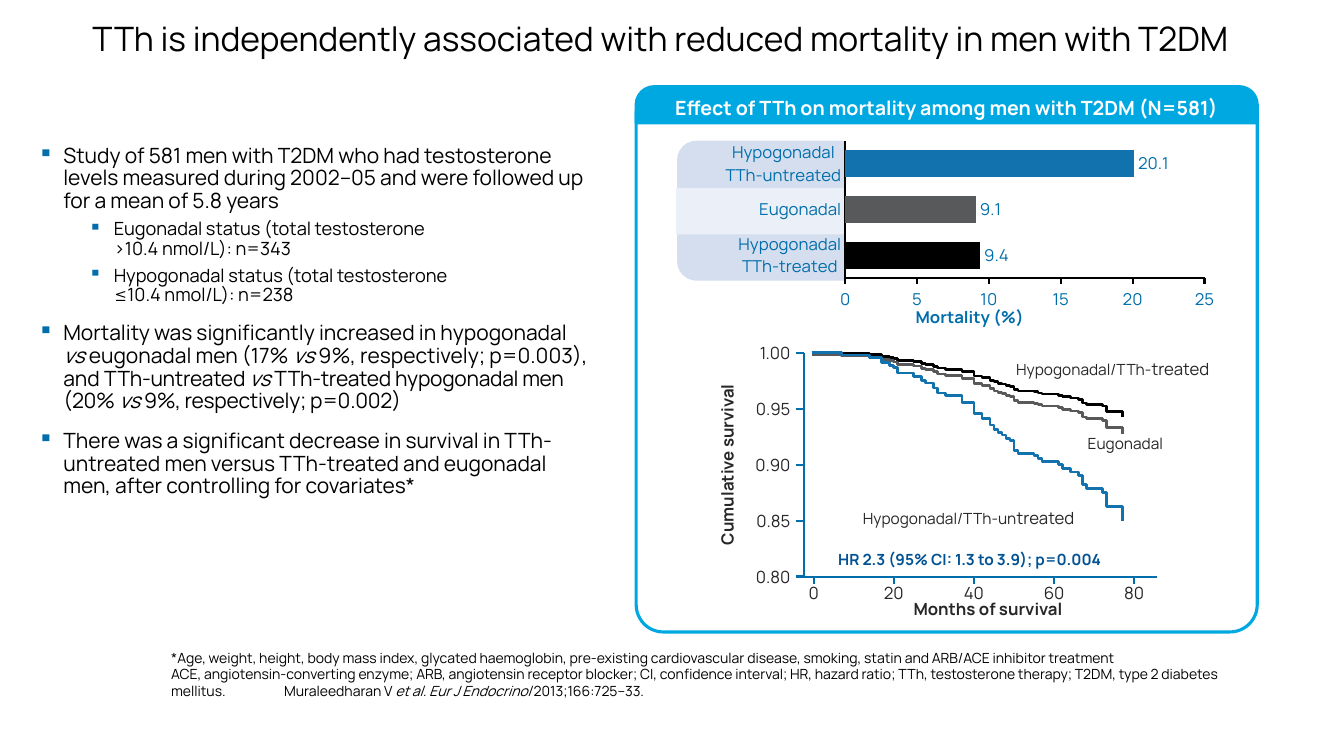
from copy import deepcopy

from lxml import etree
from pptx import Presentation, util as u
from pptx.chart.data import CategoryChartData
from pptx.dml.color import RGBColor
from pptx.enum import chart as ch, shapes, text as t
from pptx.oxml import parse_xml
from pptx.oxml.ns import nsdecls, qn

FONT = "Manrope"
BLUE, BAR_BLUE, CYAN = "006EAB", "1272AE", "00A8E1"
BLACK, GREY, INK = "000000", "58595B", "272727"
LEFT, CENTER, RIGHT = t.PP_ALIGN.LEFT, t.PP_ALIGN.CENTER, t.PP_ALIGN.RIGHT
TOP, MIDDLE, BOTTOM = t.MSO_ANCHOR.TOP, t.MSO_ANCHOR.MIDDLE, t.MSO_ANCHOR.BOTTOM
colour = RGBColor.from_string


def write(box, spans, size=12, hue=INK, bold=False, align=LEFT, anchor=MIDDLE, inset=None,
          wrap=True, before=0, spacing=1.0, bullet_indent=None, tab=None):
    frame = box.text_frame
    frame.word_wrap, frame.vertical_anchor = wrap, anchor
    if inset is not None:
        frame.margin_left = frame.margin_right = frame.margin_top = frame.margin_bottom = u.Inches(inset)
    para = frame.add_paragraph() if frame.text else frame.paragraphs[0]
    para.alignment, para.line_spacing, para.space_before = align, spacing, u.Pt(before)
    settings = para._p.get_or_add_pPr()
    if bullet_indent:
        settings.set("marL", str(u.Inches(bullet_indent)))
        settings.set("indent", str(u.Inches(-0.25)))
        tint = etree.SubElement(settings, qn("a:buClr"))
        etree.SubElement(tint, qn("a:srgbClr"), val=BLUE)
        etree.SubElement(settings, qn("a:buChar"), char="▪")
    if tab:
        stops = etree.SubElement(settings, qn("a:tabLst"))
        etree.SubElement(stops, qn("a:tab"), pos=str(u.Inches(tab)), algn="l")
    for item in [spans] if isinstance(spans, str) else spans:
        words, own = (item, {}) if isinstance(item, str) else item
        for number, line in enumerate(words.split("\n")):
            if number:
                para.add_line_break()
                para._p[-1].append(deepcopy(span._r.rPr))
            span = para.add_run()
            span.text = line
            span.font.name, span.font.bold = FONT, bold
            span.font.size = u.Pt(own.get("size", size))
            span.font.italic = own.get("italic", False)
            span.font.color.rgb = colour(hue)
            if "track" in own:
                span._r.rPr.set("spc", str(own["track"]))


def outline(shape, hue, width):
    shape.line.color.rgb = colour(hue)
    shape.line.width = u.Pt(width)
    if shape.shape_type == shapes.MSO_SHAPE_TYPE.LINE:
        etree.SubElement(shape._element.spPr, qn("a:effectLst"))
    else:
        shape.shadow.inherit = False


deck = Presentation()
deck.slide_width, deck.slide_height = u.Inches(13.33), u.Inches(7.5)
page = deck.slides.add_slide(deck.slide_layouts[6])
add_box, add_shape = page.shapes.add_textbox, page.shapes.add_shape

tight, italic = {"track": -20}, {"italic": True}
tight_italic = {"track": -20, "italic": True}

footnote = add_box(*map(u.Inches, (1.6, 6.38, 11.04, 0.61)))
write(footnote, "*Age, weight, height, body mass index, glycated haemoglobin, pre-existing cardiovascular disease, "
      "smoking, statin and ARB/ACE inhibitor treatment", size=10, hue=BLACK, anchor=BOTTOM)
write(footnote, ["ACE, angiotensin-converting enzyme; ARB, angiotensin receptor blocker; CI, confidence interval; "
                 "HR, hazard ratio; TTh, testosterone therapy; T2DM, type 2 diabetes mellitus.\tMuraleedharan V ",
                 ("et al. Eur J Endocrinol", italic), " 2013;166:725–33."],
      size=10, hue=BLACK, anchor=BOTTOM, tab=1.12)

title = add_box(*map(u.Inches, (0.28, 0.14, 12.54, 0.52)))
write(title, [("TTh", tight), " is independently associated with reduced mortality in men with T2DM"],
      size=24, hue=BLACK, align=CENTER, spacing=0.9)

findings = [
    (15, 0, 0.25, "Study of 581 men with T2DM who had testosterone levels measured during 2002–05 "
                  "and were followed up for a mean of 5.8 years"),
    (13, 5, 0.75, "Eugonadal status (total testosterone\n>10.4 nmol/L): n=343"),
    (13, 5, 0.75, "Hypogonadal status (total testosterone\n≤10.4 nmol/L): n=238"),
    (15, 12, 0.25, ["Mortality was significantly increased in hypogonadal ", ("vs ", italic),
                    "eugonadal men (17% ", ("vs", italic), " 9%, respectively; p=0.003), and ",
                    ("TTh-untreated ", tight), ("vs ", tight_italic),
                    ("TTh-treated hypogonadal men (20% ", tight), ("vs", tight_italic),
                    (" 9%, respectively; p=0.002)", tight)]),
    (15, 12, 0.25, "There was a significant decrease in survival in TTh-untreated men versus TTh-treated "
                   "and eugonadal men, after controlling for covariates*"),
]
body = add_box(*map(u.Inches, (0.28, 1.39, 5.69, 4.51)))
for size, before, indent, finding in findings:
    write(body, finding, size=size, hue=BLACK, anchor=TOP, before=before, spacing=0.9, bullet_indent=indent)

for place, angle, corner, hue in [((6.85, 1.26, 1.39, 1.66), 270, 0.14, "D5DEEF"),
                                  ((7.31, 1.26, 0.46, 1.67), 90, 0, "EBEFF7")]:
    band = add_shape(shapes.MSO_SHAPE.ROUND_2_SAME_RECTANGLE, *map(u.Inches, place))
    band.rotation = angle
    band.adjustments[0], band.adjustments[1] = corner, 0
    band.fill.solid()
    band.fill.fore_color.rgb = colour(hue)
    band.line.fill.background()
    band.shadow.inherit = False

bars = [("Hypogonadal\nTTh-treated", 9.4, BLACK), ("Eugonadal", 9.1, GREY),
        ("Hypogonadal\nTTh-untreated", 20.1, BAR_BLUE)]
data = CategoryChartData()
data.categories = [name for name, value, hue in bars]
data.add_series("Series 1", [value for name, value, hue in bars])
chart = page.shapes.add_chart(ch.XL_CHART_TYPE.BAR_CLUSTERED,
                              *map(u.Inches, (6.6, 1.34, 5.57, 1.97)), data).chart
chart.has_legend = chart.has_title = False
chart.font.name, chart.font.size = FONT, u.Pt(12)
chart.font.color.rgb = colour(BLUE)
groups, mortality = chart.category_axis, chart.value_axis
for axis, tick in [(groups, ch.XL_TICK_MARK.NONE), (mortality, ch.XL_TICK_MARK.OUTSIDE)]:
    axis.major_tick_mark, axis.minor_tick_mark = tick, ch.XL_TICK_MARK.NONE
    axis.has_major_gridlines = False
    axis.format.line.color.rgb = colour(BLACK)
    axis.format.line.width = u.Pt(1.5)
mortality.minimum_scale, mortality.maximum_scale, mortality.major_unit = 0, 25, 5
mortality.tick_labels.number_format, mortality.tick_labels.number_format_is_linked = "0", False
write(mortality.axis_title, "Mortality (%)", hue=BLUE, bold=True)
plot = chart.plots[0]
plot.gap_width, plot.vary_by_categories, plot.has_data_labels = 68, False, True
labels = plot.data_labels
labels.show_value, labels.position = True, ch.XL_LABEL_POSITION.OUTSIDE_END
labels.number_format, labels.number_format_is_linked = "#,##0.0", False
for number, (name, value, hue) in enumerate(bars):
    fill = plot.series[0].points[number].format.fill
    fill.solid()
    fill.fore_color.rgb = colour(hue)
area = chart._chartSpace.chart.plotArea
heading = mortality.axis_title._element
for owner, slot, target, sizes in [
        (area, 0, '<c:layoutTarget val="inner"/>', {"x": 0.32, "y": 0.03, "w": 0.64, "h": 0.71}),
        (heading, 1, "", {"x": 0.44, "y": 0.86})]:
    for old in owner.findall(qn("c:layout")):
        owner.remove(old)
    modes = "".join(f'<c:{key}Mode val="edge"/>' for key in "xy")
    values = "".join(f'<c:{key} val="{value}"/>' for key, value in sizes.items())
    owner.insert(slot, parse_xml(f'<c:layout {nsdecls("c")}><c:manualLayout>{target}{modes}{values}'
                                 '</c:manualLayout></c:layout>'))

axis_left, axis_right, axis_top, axis_bottom = 7.97, 11.48, 3.5, 5.72
month_zero, tick_length = 8.07, 0.07
month_width = 3.18 / 80
percent_height = (axis_bottom - axis_top) / 20

ticks = []
for months in range(0, 81, 20):
    x = month_zero + months * month_width
    ticks.append((x, axis_bottom, x, axis_bottom + tick_length))
    label = add_box(*map(u.Inches, (x - 0.25, axis_bottom, 0.5, 0.33)))
    write(label, str(months), align=CENTER, wrap=False)
for percent in range(80, 101, 5):
    y = axis_top + (100 - percent) * percent_height
    ticks.append((axis_left, y, axis_left - tick_length, y))
    label = add_box(*map(u.Inches, (7.46, y - 0.17, 0.38, 0.34)))
    write(label, f"{percent / 100:.2f}", align=RIGHT, inset=0, wrap=False)
for ends in ticks:
    outline(page.shapes.add_connector(shapes.MSO_CONNECTOR.STRAIGHT, *map(u.Inches, ends)), BLUE, 1.5)

write(add_box(*map(u.Inches, (8.1, 5.88, 3.4, 0.33))), "Months of survival", bold=True, align=CENTER)
survival_title = add_box(*map(u.Inches, (6.1, 4.48, 2.22, 0.26)))
survival_title.rotation = 270
write(survival_title, "Cumulative survival", bold=True, align=CENTER, inset=0, wrap=False)
write(add_box(*map(u.Inches, (7.99, 5.29, 3.26, 0.51))), "HR 2.3 (95% CI: 1.3 to 3.9); p=0.004",
      size=11, hue="005294", bold=True, align=CENTER)
larger = {"size": 12}
for place, name in [((9.98, 3.49, 2.4, 0.33), ["Hypogonadal/TTh-", ("treated", larger)]),
                    ((10.69, 4.24, 1.26, 0.31), "Eugonadal"),
                    ((8.46, 4.97, 2.6, 0.33), ["Hypogonadal/TTh-un", ("treated", larger)])]:
    write(add_box(*map(u.Inches, place)), name, size=11)

months_by_percent_lost = {
    0.2: [7, 19, 28, 47, 49, 55], 0.25: [14, 20, 33, 56, 57], 0.3: [25, 46, 48, 51, 61, 64, 66],
    0.35: [62, 68, 72], 0.4: [27, 42, 45], 0.45: [17, 21, 30, 31], 0.6: [37, 44], 0.85: [50, 67],
    1.0: [40], 1.25: [73, 77]}
losses = sorted((month, lost) for lost, months in months_by_percent_lost.items() for month in months)
relative_risks = [(0.38, 100, BLACK), (0.47, 99.8, GREY), (1, 100, BAR_BLUE)]

lines = [([(axis_left, axis_top), (axis_left, axis_bottom), (axis_right, axis_bottom)], BLUE, 1.5)]
for risk, percent, hue in relative_risks:
    y = axis_top + (100 - percent) * percent_height
    steps = [(month_zero - 0.02, y)]
    for month, lost in losses:
        x = month_zero + month * month_width
        steps.append((x, y))
        y += lost * risk * percent_height
        steps.append((x, y))
    lines.append((steps, hue, 2))
for points, hue, width in lines:
    start, *rest = [tuple(map(u.Inches, point)) for point in points]
    builder = page.shapes.build_freeform(*start)
    builder.add_line_segments(rest, close=False)
    line = builder.convert_to_shape()
    line.fill.background()
    outline(line, hue, width)

panel_left, panel_top, panel_width = 6.31, 0.86, 6.16
panel = add_shape(shapes.MSO_SHAPE.ROUNDED_RECTANGLE, *map(u.Inches, (panel_left, panel_top, panel_width, 5.41)))
panel.adjustments[0] = 0.05
panel.fill.background()
header = add_shape(shapes.MSO_SHAPE.ROUND_2_SAME_RECTANGLE,
                   *map(u.Inches, (panel_left, panel_top, panel_width, 0.36)))
header.adjustments[0], header.adjustments[1] = 0.5, 0
header.fill.solid()
header.fill.fore_color.rgb = colour(CYAN)
for shape in (panel, header):
    outline(shape, CYAN, 2.25)
write(header, "Effect of TTh on mortality among men with T2DM (N=581)", size=14, hue="FFFFFF", bold=True, align=CENTER)

deck.save("out.pptx")
